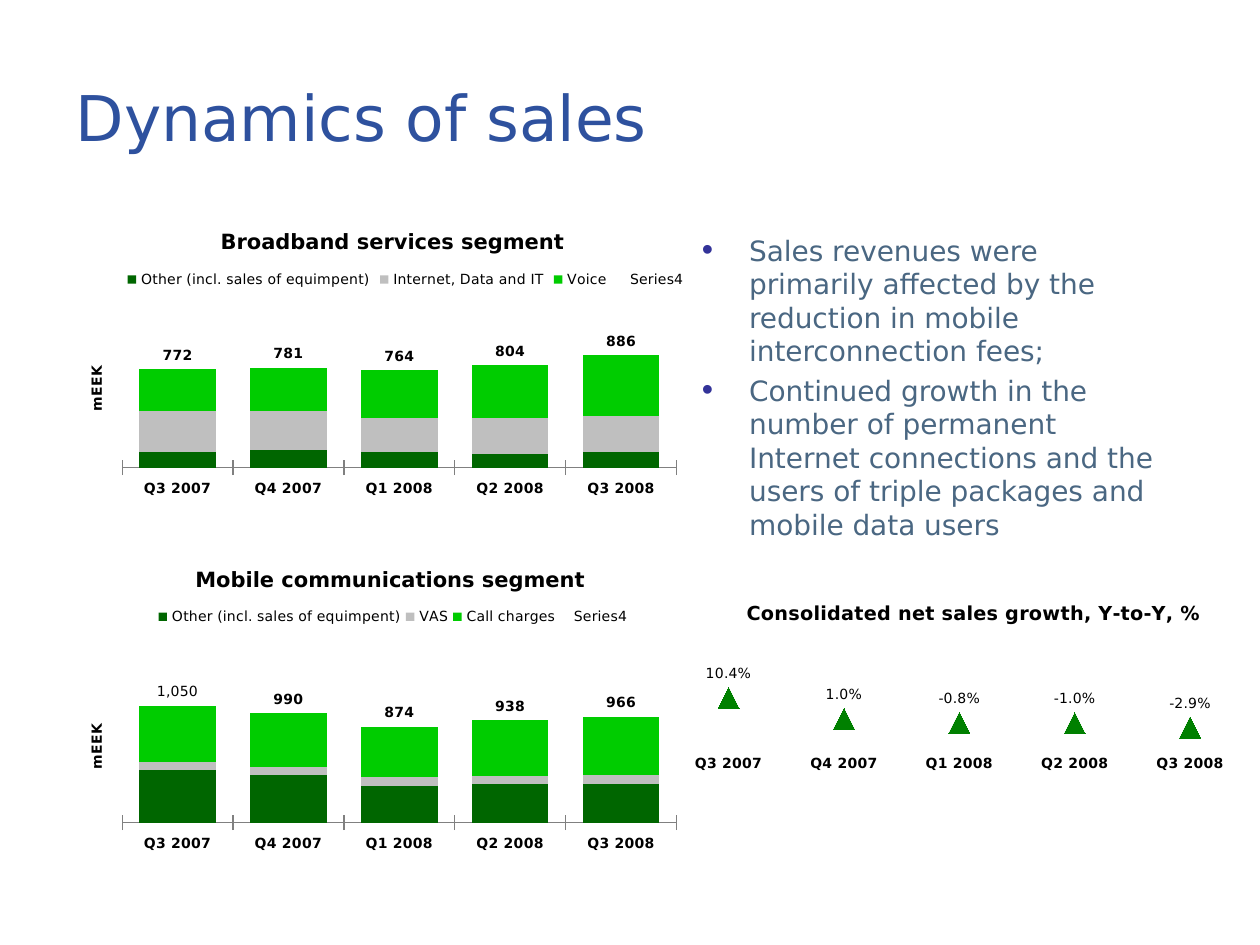
from lxml.etree import SubElement
from pptx import Presentation
from pptx.chart.data import CategoryChartData
from pptx.dml.color import RGBColor
from pptx.enum.chart import (XL_CHART_TYPE, XL_LABEL_POSITION, XL_LEGEND_POSITION,
                             XL_MARKER_STYLE, XL_TICK_LABEL_POSITION, XL_TICK_MARK)
from pptx.enum.text import MSO_ANCHOR, MSO_AUTO_SIZE, PP_ALIGN
from pptx.oxml.ns import qn
from pptx.util import Pt

FONT = "DejaVu Sans"
TITLE = "Dynamics of sales"
BULLETS = [
    "Sales revenues were primarily affected by the reduction in mobile interconnection fees;",
    "Continued growth in the number of permanent Internet connections and the users of "
    "triple packages and mobile data users",
]
QUARTERS = ["Q3 2007", "Q4 2007", "Q1 2008", "Q2 2008", "Q3 2008"]
STACK_COLOURS = ["006600", "BFBFBF", "00CC00", None]
SEGMENTS = [
    {
        "title": "Broadband services segment",
        "box": (33.84, 67.68, 360, 221.76),
        "series": [
            ("Other (incl. sales of equimpent)", [120, 140, 120, 110, 120]),
            ("Internet, Data and IT", [320, 300, 270, 280, 280]),
            ("Voice", [330, 340, 370, 410, 480]),
            ("Series4", [772, 781, 764, 804, 886]),
        ],
        "maximum": 2000,
        "plot": (0.1, 0.24, 0.88, 0.66),
        "title_at": (0.25, 0.27),
        "legend": (0.1, 0.39, 0.9, 0.05),
        "plain_labels": [],
    },
    {
        "title": "Mobile communications segment",
        "box": (33.84, 275.76, 360, 216),
        "series": [
            ("Other (incl. sales of equimpent)", [480, 430, 330, 350, 350]),
            ("VAS", [70, 70, 80, 70, 80]),
            ("Call charges", [510, 490, 460, 510, 530]),
            ("Series4", [1050, 990, 874, 938, 966]),
        ],
        "maximum": 2500,
        "plot": (0.1, 0.17, 0.88, 0.73),
        "title_at": (0.21, 0.21),
        "legend": (0.15, 0.33, 0.76, 0.05),
        "plain_labels": [0],
    },
]
GROWTH = {
    "title": "Consolidated net sales growth, Y-to-Y, %",
    "box": (376.56, 230.4, 343.44, 216),
    "series": [("Series 1", [0.104, 0.01, -0.008, -0.01, -0.029])],
    "plot": (0.02, 0.14, 0.96, 0.76),
    "title_at": (0.14, 0.51),
}


def colour(value):
    """Turn a hex string into a colour."""
    return RGBColor.from_string(value)


def style(font, size, shade="000000", bold=False):
    """Format a font."""
    font.name, font.size, font.bold = FONT, Pt(size), bold
    font.color.rgb = colour(shade)


def place(shape, box):
    """Move and size a shape."""
    shape.left, shape.top, shape.width, shape.height = map(Pt, box)


def lay_out(element, index, box):
    """Give a chart part a manual position in fractions of the chart."""
    for old in element.findall(qn("c:layout")):
        element.remove(old)
    layout = SubElement(element, qn("c:layout"))
    element.insert(index, layout)
    manual = SubElement(layout, qn("c:manualLayout"))
    if index == 0:
        SubElement(manual, qn("c:layoutTarget")).set("val", "inner")
    for name in ("xMode", "yMode"):
        SubElement(manual, qn("c:" + name)).set("val", "edge")
    for name, value in zip("xywh", box):
        SubElement(manual, qn("c:" + name)).set("val", str(value))


def write_title(title, text, size, position):
    """Write and position a chart or axis title."""
    frame = title.text_frame
    frame.text = text
    style(frame.paragraphs[0].runs[0].font, size, bold=True)
    lay_out(title._element, 1, position)
    return frame


def show_labels(plot_series, number_format, position, bold):
    """Show the values of a series."""
    labels = plot_series.data_labels
    labels.show_value = True
    labels.number_format, labels.number_format_is_linked = number_format, False
    labels.position = position
    style(labels.font, 8, bold=bold)


def add_chart(page, kind, content, number_format, title_size):
    """Add a chart with its title, axes and plot area."""
    data = CategoryChartData(number_format=number_format)
    data.categories = QUARTERS
    for name, values in content["series"]:
        data.add_series(name, values)
    chart = page.shapes.add_chart(kind, *map(Pt, content["box"]), data).chart
    chart.font.name, chart.font.size = "Arial", Pt(10)
    chart.font.color.rgb = colour("000000")
    chart.has_legend = False
    chart.plots[0].vary_by_categories = False
    write_title(chart.chart_title, content["title"], title_size, content["title_at"])
    chart.chart_title.include_in_layout = True
    lay_out(chart._chartSpace.chart.plotArea, 0, content["plot"])
    chart.value_axis.visible = False
    chart.value_axis.has_major_gridlines = False
    chart.category_axis.major_tick_mark = XL_TICK_MARK.CROSS
    style(chart.category_axis.tick_labels.font, 8, bold=True)
    return chart


def add_segment(page, content):
    """Add a stacked column chart with totals above the columns."""
    chart = add_chart(page, XL_CHART_TYPE.COLUMN_STACKED, content, "#,##0", 12)
    plot = chart.plots[0]
    plot.gap_width, plot.overlap = 45, 100
    for series, shade in zip(plot.series, STACK_COLOURS):
        if shade:
            series.format.fill.solid()
            series.format.fill.fore_color.rgb = colour(shade)
        else:
            series.format.fill.background()
    totals = plot.series[-1]
    show_labels(totals, "#,##0", XL_LABEL_POSITION.INSIDE_BASE, True)
    for index in content["plain_labels"]:
        label = totals.points[index].data_label
        style(label.font, 8)
        label.position = XL_LABEL_POSITION.INSIDE_BASE
    axis = chart.value_axis
    axis.minimum_scale, axis.maximum_scale = 0, content["maximum"]
    frame = write_title(axis.axis_title, "mEEK", 8, (0.04, 0.63))
    frame._txBody.bodyPr.set("rot", "-5400000")
    frame._txBody.bodyPr.set("vert", "horz")
    chart.category_axis.format.line.color.rgb = colour("808080")
    chart.has_legend = True
    chart.legend.position = XL_LEGEND_POSITION.TOP
    chart.legend.include_in_layout = False
    style(chart.legend.font, 8)
    lay_out(chart.legend._element, 1, content["legend"])


def add_growth(page):
    """Add the growth chart drawn with markers only."""
    chart = add_chart(page, XL_CHART_TYPE.LINE_MARKERS_STACKED, GROWTH, "0.0%", 11)
    axis = chart.value_axis
    axis.minimum_scale, axis.maximum_scale, axis.major_unit = -0.1, 1.2, 0.5
    chart.category_axis.tick_label_position = XL_TICK_LABEL_POSITION.LOW
    chart.category_axis.format.line.fill.background()
    series = chart.plots[0].series[0]
    series.smooth = False
    series.format.line.fill.background()
    series.marker.style, series.marker.size = XL_MARKER_STYLE.TRIANGLE, 12
    series.marker.format.fill.solid()
    series.marker.format.fill.fore_color.rgb = colour("008000")
    series.marker.format.line.fill.background()
    show_labels(series, "0.0%", XL_LABEL_POSITION.ABOVE, False)


def add_text(page):
    """Fill the title and the bulleted list."""
    title, body = page.shapes.title, page.placeholders[1]
    place(title, (36, 21.6, 488.16, 90))
    place(body, (393.84, 129.6, 282.24, 191.52))
    title.text_frame.text = TITLE
    title.text_frame.vertical_anchor = MSO_ANCHOR.MIDDLE
    title.text_frame.paragraphs[0].alignment = PP_ALIGN.LEFT
    style(title.text_frame.paragraphs[0].runs[0].font, 36, "2E519E")
    body.text_frame.text = "\n".join(BULLETS)
    for frame in (title.text_frame, body.text_frame):
        frame.auto_size = MSO_AUTO_SIZE.NONE
    for index, para in enumerate(body.text_frame.paragraphs):
        para.space_before = Pt(3.2 if index else 0)
        properties = para._p.get_or_add_pPr()
        properties.set("marL", str(Pt(27)))
        properties.set("indent", str(-Pt(27)))
        shade = SubElement(properties, qn("a:buClr"))
        SubElement(shade, qn("a:srgbClr")).set("val", "333399")
        SubElement(properties, qn("a:buSzPct")).set("val", "115000")
        SubElement(properties, qn("a:buChar")).set("char", "•")
        style(para.runs[0].font, 16, "4A6782")


deck = Presentation()
deck.slide_width, deck.slide_height = Pt(720), Pt(540)
page = deck.slides.add_slide(deck.slide_layouts[1])
add_text(page)
for segment in SEGMENTS:
    add_segment(page, segment)
add_growth(page)
deck.save("out.pptx")
